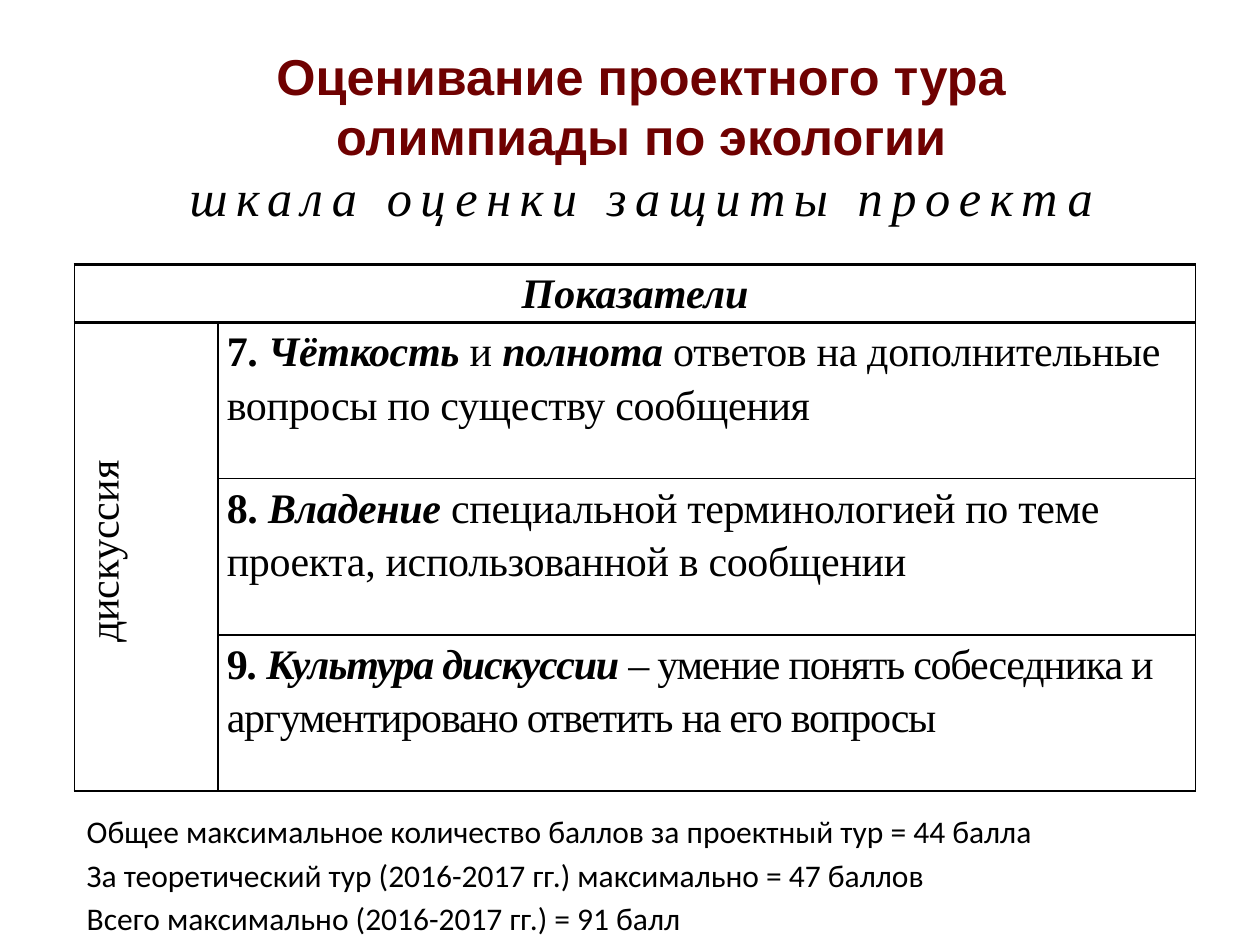
"""Slide with the scoring scale for defending a project at the ecology olympiad."""
from lxml.etree import SubElement
from pptx import Presentation
from pptx.dml.color import RGBColor
from pptx.enum.text import MSO_ANCHOR, PP_ALIGN
from pptx.oxml.ns import qn
from pptx.util import Inches, Pt

BLACK = RGBColor(0, 0, 0)
MAROON = RGBColor(0x6F, 0x01, 0x01)
SERIF = "Times New Roman"

prs = Presentation()
prs.slide_width, prs.slide_height = Inches(10), Inches(7.5)
W, H = prs.slide_width, prs.slide_height
LEFT, WIDTH = int(W * 0.059), int(W * 0.89)
s = prs.slides.add_slide(prs.slide_layouts[6])


def style(r, size, name, color=BLACK, bold=False, italic=False, spacing=0):
    r.font.size, r.font.name = Pt(size), name
    r.font.color.rgb = color
    r.font.bold, r.font.italic = bold, italic
    if spacing:
        r.font._element.set("spc", str(int(spacing * 100)))


def fill_cell(cell, parts, align=PP_ALIGN.LEFT, spacing=0):
    cell.margin_left = cell.margin_right = Inches(0.07)
    cell.margin_top = cell.margin_bottom = 0
    p = cell.text_frame.paragraphs[0]
    p.alignment, p.line_spacing = align, 1.15
    for text, bold, italic in parts:
        r = p.add_run()
        r.text = text
        style(r, 24, SERIF, bold=bold, italic=italic, spacing=spacing)


tf = s.shapes.add_textbox(LEFT, int(H * 0.06), int(W * 0.9), int(H * 0.167)).text_frame
tf.word_wrap = True
tf.vertical_anchor = MSO_ANCHOR.MIDDLE
p = tf.paragraphs[0]
p.text = "Оценивание проектного тура\vолимпиады по экологии\v"
p.alignment = PP_ALIGN.CENTER
for r in p.runs:
    style(r, 28.8, "Arial", MAROON, bold=True)
for br in p._p.findall(qn("a:br")):
    SubElement(br, qn("a:rPr")).set("sz", "2880")
for text, spacing in (("шкала оценки защиты проект", 4.9), ("а", 0)):
    r = p.add_run()
    r.text = text
    style(r, 28.8, SERIF, italic=True, spacing=spacing)

HEAD, ROW = int(H * 0.056), int(H * 0.1653)
tbl = s.shapes.add_table(4, 2, LEFT, int(H * 0.28), WIDTH, HEAD + 3 * ROW).table
tbl.first_row = tbl.horz_banding = False
tbl.columns[0].width = int(W * 0.114)
tbl.columns[1].width = WIDTH - tbl.columns[0].width
for i, row in enumerate(tbl.rows):
    row.height = ROW if i else HEAD
    for cell in row.cells:
        cell.fill.background()
        tcPr = cell._tc.get_or_add_tcPr()
        widths = {"L": 1, "R": 1, "T": 1 if i > 1 else 1.5, "B": 1 if i in (1, 2) else 1.5}
        for k, (side, width) in enumerate(widths.items()):
            ln = SubElement(tcPr, qn(f"a:ln{side}"), w=str(Pt(width)))
            SubElement(SubElement(ln, qn("a:solidFill")), qn("a:srgbClr"), val=str(BLACK))
            tcPr.insert(k, ln)
tbl.cell(0, 0).merge(tbl.cell(0, 1))
tbl.cell(1, 0).merge(tbl.cell(3, 0))

fill_cell(tbl.cell(0, 0), [("Показатели", True, True)], PP_ALIGN.CENTER)
fill_cell(tbl.cell(1, 0), [("дискуссия", False, False)], PP_ALIGN.CENTER)
tbl.cell(1, 0)._tc.tcPr.set("vert", "vert270")
tbl.cell(1, 0).text_frame.paragraphs[0]._p.pPr.set("marL", str(Inches(0.08)))

criteria = [
    (-0.2, [("7. ", True, False), ("Чёткость", True, True), (" и ", False, False),
            ("полнота", True, True),
            (" ответов на дополнительные вопросы по существу сообщения", False, False)]),
    (-0.2, [("8. ", True, False), ("Владение", True, True),
            (" специальной терминологией по теме проекта, использованной в сообщении", False, False)]),
    (-0.7, [("9. ", True, False), ("Культура дискуссии", True, True),
            (" – умение понять собеседника и аргументировано ответить на его вопросы", False, False)]),
]
for i, (spacing, parts) in enumerate(criteria, 1):
    fill_cell(tbl.cell(i, 1), parts, spacing=spacing)

tf = s.shapes.add_textbox(LEFT, int(H * 0.847), WIDTH, int(H * 0.153)).text_frame
tf.word_wrap = True
tf.text = "\n".join([
    "Общее максимальное количество баллов за проектный тур = 44 балла",
    "За теоретический тур (2016-2017 гг.) максимально = 47 баллов",
    "Всего максимально (2016-2017 гг.) = 91 балл",
])
for p in tf.paragraphs:
    p.line_spacing = 1.15
    style(p.runs[0], 18, "Calibri")
tf.paragraphs[0].alignment = PP_ALIGN.JUSTIFY

prs.save("out.pptx")
